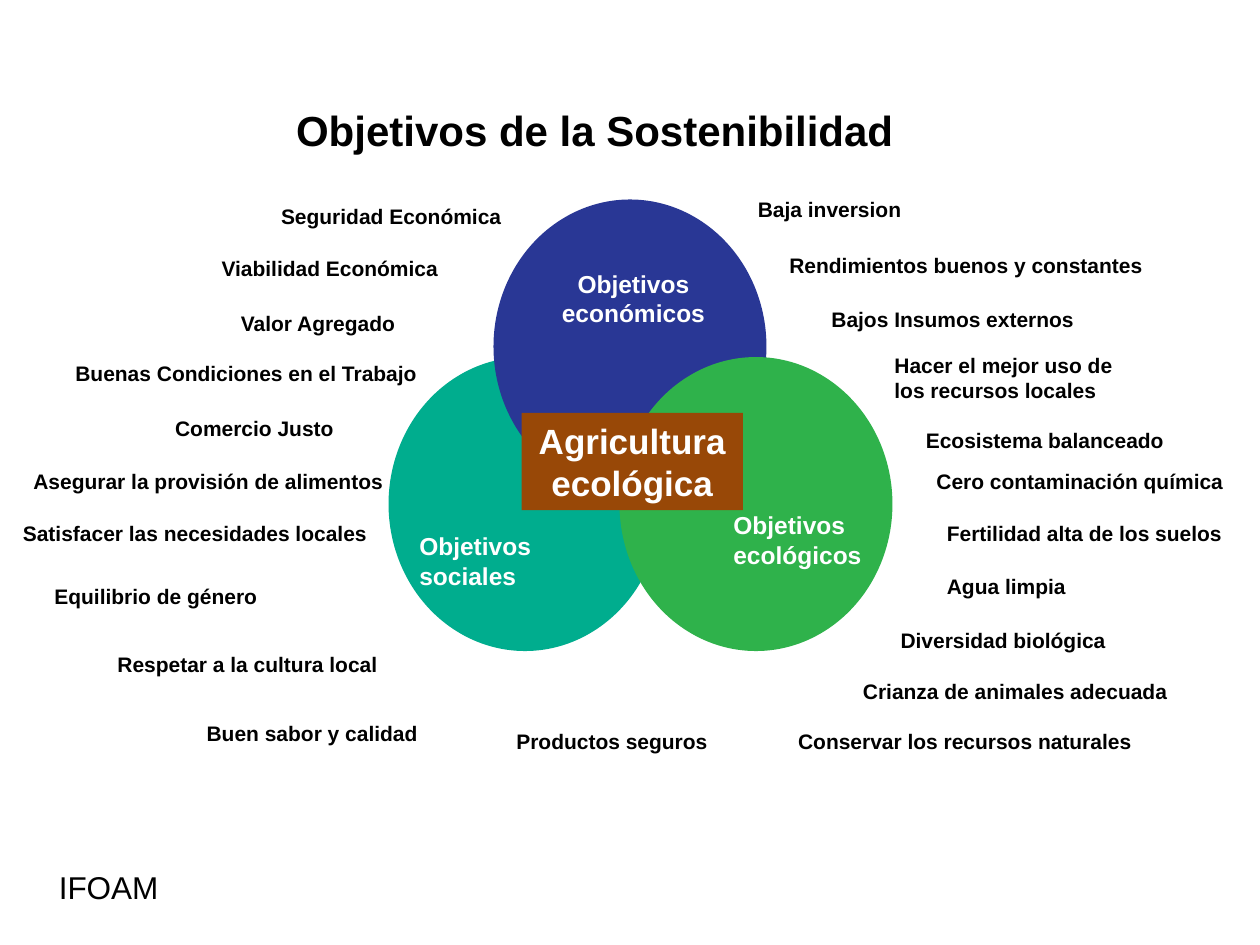
from pptx import Presentation
from pptx.dml.color import RGBColor
from pptx.enum.shapes import MSO_SHAPE
from pptx.enum.text import MSO_ANCHOR, MSO_AUTO_SIZE, PP_ALIGN
from pptx.util import Pt

BLACK = RGBColor(0x00, 0x00, 0x00)
WHITE = RGBColor(0xFF, 0xFF, 0xFF)
TEAL = RGBColor(0x00, 0xAD, 0x8E)
BLUE = RGBColor(0x29, 0x37, 0x95)
GREEN = RGBColor(0x2F, 0xB2, 0x4B)
BROWN = RGBColor(0x98, 0x48, 0x07)
OVAL = MSO_SHAPE.OVAL
RECTANGLE = MSO_SHAPE.RECTANGLE
LEFT = PP_ALIGN.LEFT
CENTER = PP_ALIGN.CENTER
TOP = MSO_ANCHOR.TOP
FIT_SHAPE = MSO_AUTO_SIZE.SHAPE_TO_FIT_TEXT
FONT = "Arial"
TITLE_ONLY = 5
LABEL_HEIGHT = 21.8

CIRCLES = [(222, 204, TEAL), (282, 114, BLUE), (354, 204, GREEN)]

GOALS = [
    ("Baja inversion", 426, 108.5, 96.5),
    ("Rendimientos buenos y constantes", 444, 141, 216.5),
    ("Bajos Insumos externos", 468, 171.5, 153.5),
    ("Ecosistema balanceado", 522, 240.5, 152),
    ("Cero contaminación química", 528, 264, 178.5),
    ("Fertilidad alta de los suelos", 534, 294, 172),
    ("Agua limpia", 534, 324, 84),
    ("Diversidad biológica", 507.5, 355, 132),
    ("Crianza de animales adecuada", 486, 384, 190),
    ("Conservar los recursos naturales", 449, 412.5, 207.5),
    ("Productos seguros", 288, 412.5, 124),
    ("Buen sabor y calidad", 111, 408, 135.5),
    ("Seguridad Económica", 153.5, 112.5, 140.5),
    ("Viabilidad Económica", 119.5, 142.5, 140.5),
    ("Valor Agregado", 130.5, 174, 103.5),
    ("Buenas Condiciones en el Trabajo", 36, 202.5, 211),
    ("Comercio Justo", 93, 234, 105),
    ("Asegurar la provisión de alimentos", 12, 264, 217.5),
    ("Satisfacer las necesidades locales", 6, 294, 213),
    ("Equilibrio de género", 24, 330, 131),
    ("Respetar a la cultura local", 60, 368.5, 165),
]


def write_text(shape, lines, size, color=BLACK, bold=True, align=LEFT, wrap=True):
    """Fill the shape with one paragraph per line."""
    frame = shape.text_frame
    frame.word_wrap = wrap
    frame.auto_size = FIT_SHAPE
    frame.vertical_anchor = TOP
    for index, line in enumerate(lines):
        paragraph = frame.add_paragraph() if index else frame.paragraphs[0]
        paragraph.alignment = align
        run = paragraph.add_run()
        run.text = line
        run.font.name = FONT
        run.font.size = Pt(size)
        run.font.bold = bold
        run.font.color.rgb = color


def add_text(slide, lines, left, top, width, height, size, **style):
    """Add a text box."""
    box = slide.shapes.add_textbox(Pt(left), Pt(top), Pt(width), Pt(height))
    write_text(box, lines, size, **style)


def add_filled_shape(slide, kind, left, top, width, height, color):
    """Add a flat shape without outline."""
    shape = slide.shapes.add_shape(kind, Pt(left), Pt(top), Pt(width), Pt(height))
    shape.shadow.inherit = False
    shape.fill.solid()
    shape.fill.fore_color.rgb = color
    shape.line.fill.background()
    return shape


def add_title(slide, text):
    """Place and format the title placeholder."""
    title = slide.shapes.title
    title.left, title.top, title.width, title.height = Pt(162), Pt(56), Pt(390), Pt(36)
    write_text(title, [text], 24)


def add_circles(slide):
    """Add the three overlapping circles, their labels and the centre box."""
    for left, top, color in CIRCLES:
        add_filled_shape(slide, OVAL, left, top, 156, 168, color)
    add_text(slide, ["Objetivos económicos"], 290, 150, 144, 41, 14,
             color=WHITE, align=CENTER)
    add_text(slide, ["Objetivos", "sociales"], 232.5, 300, 79, 41, 14,
             color=WHITE, wrap=False)
    add_text(slide, ["Objetivos", "ecológicos"], 412, 288, 88.5, 41, 14,
             color=WHITE, wrap=False)
    centre = add_filled_shape(slide, RECTANGLE, 298, 236, 126.5, 55.5, BROWN)
    write_text(centre, ["Agricultura ecológica"], 20, color=WHITE, align=CENTER)


def add_goals(slide):
    """Add the goals around the circles."""
    for text, left, top, width in GOALS:
        add_text(slide, [text], left, top, width, LABEL_HEIGHT, 12, wrap=False)
    add_text(slide, ["Hacer el mejor uso de los recursos locales"],
             504, 198, 156, 36, 12)


def main():
    """Build and save the presentation."""
    presentation = Presentation()
    presentation.slide_width = Pt(720)
    presentation.slide_height = Pt(540)
    slide = presentation.slides.add_slide(presentation.slide_layouts[TITLE_ONLY])
    add_title(slide, "Objetivos de la Sostenibilidad")
    add_circles(slide)
    add_goals(slide)
    add_text(slide, ["IFOAM"], 26.5, 492.5, 178, 29, 18, bold=False)
    presentation.save("out.pptx")


if __name__ == "__main__":
    main()
